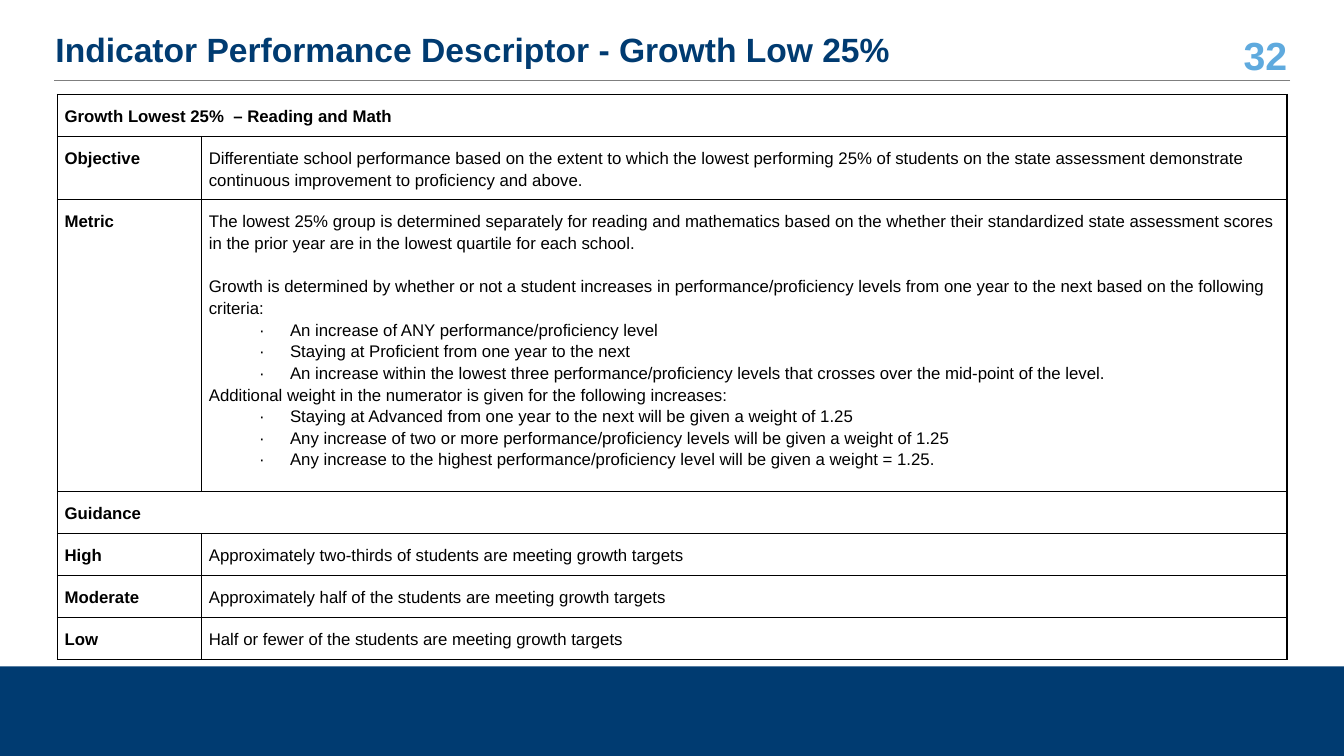
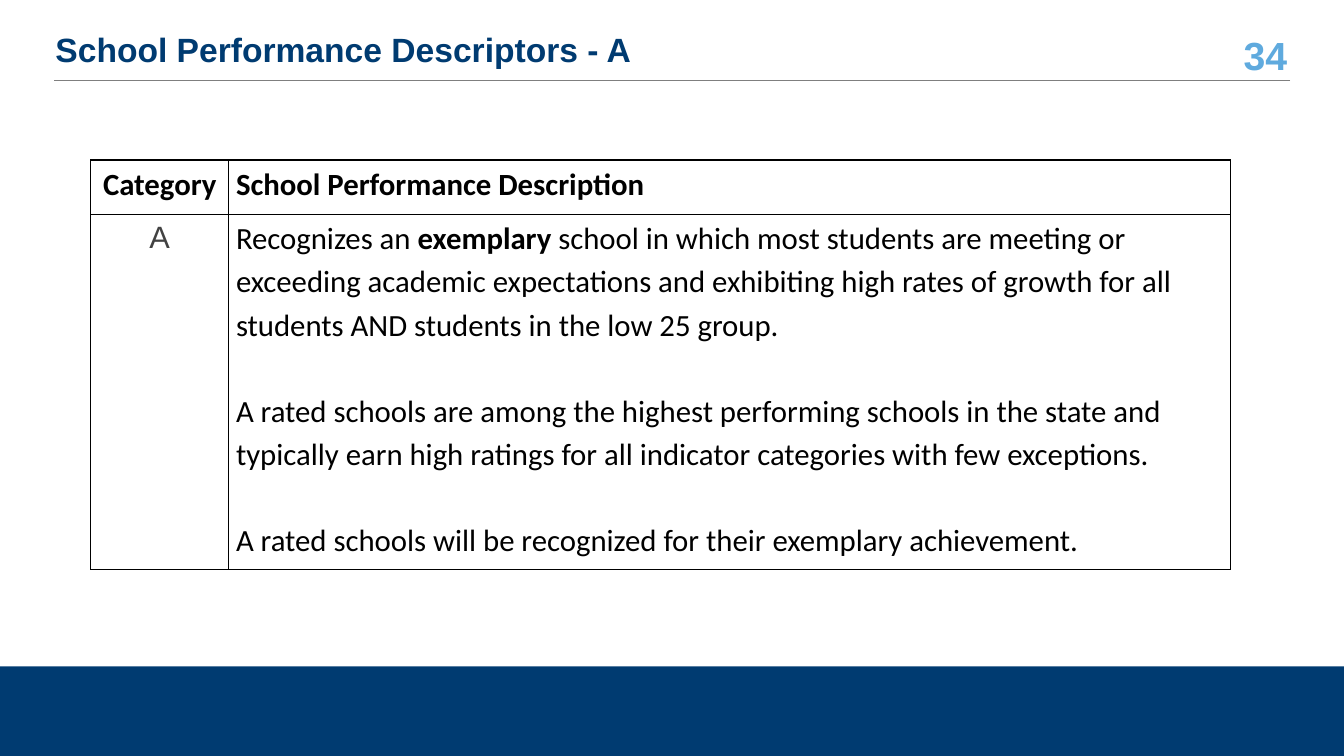
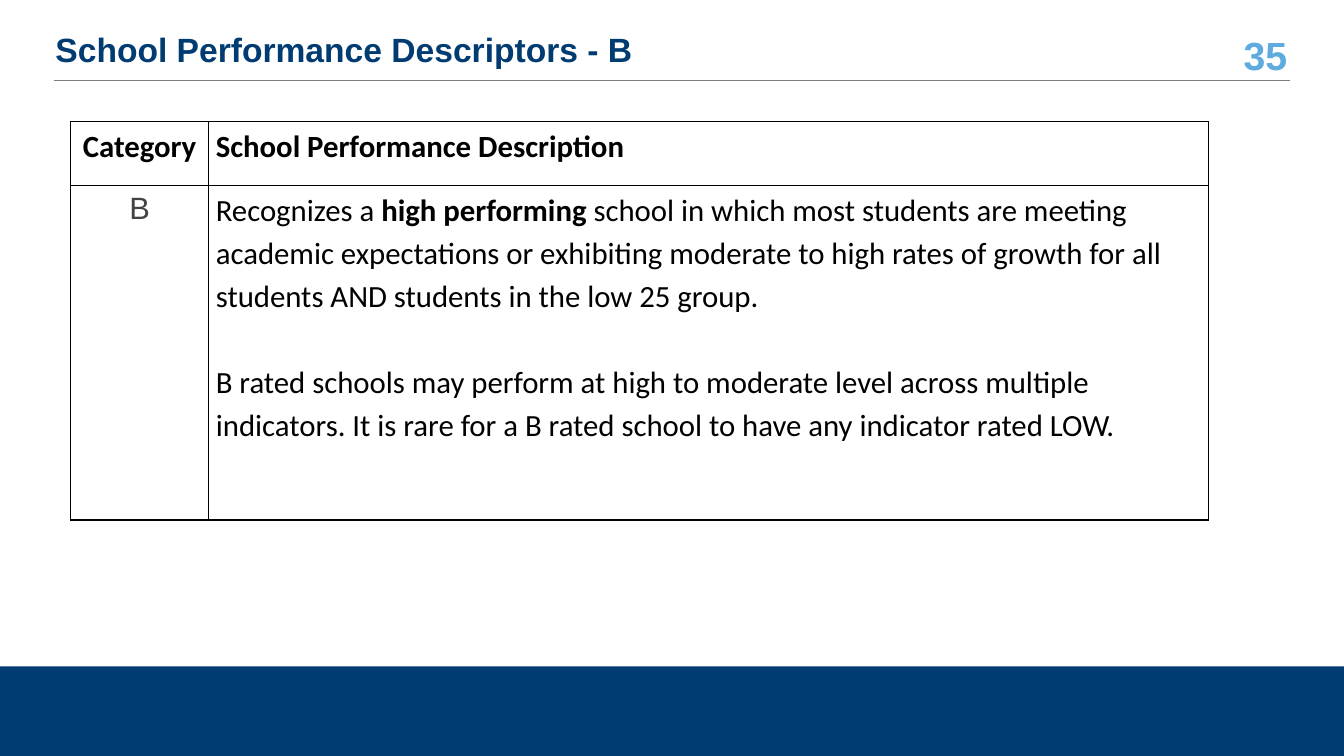
from dataclasses import dataclass

from pptx import Presentation
from pptx import util as u
from pptx.dml import color
from pptx.enum import shapes, text
from pptx.oxml import xmlchemy

Pt = u.Pt
COLORS = {
    "navy": "003B71",
    "sky": "5FAADE",
    "rule": "7F7F7F",
    "ink": "000000",
    "grade": "424242",
}
LEFT, CENTER, RIGHT = text.PP_ALIGN.LEFT, text.PP_ALIGN.CENTER, text.PP_ALIGN.RIGHT


@dataclass
class Style:
    font: str
    size: float
    color: str
    spacing: float = 1.0


@dataclass
class Line:
    words: str
    gap: float = 0
    bullet: bool = False
    align: int = LEFT
    style: Style = None


TITLE = Style("Arial", 24, "navy", 0.9)
NUMBER = Style("Arial", 28, "sky")
DETAIL = Style("Arial", 12, "ink", 1.15)
RATING = Style("Calibri", 22, "ink", 1.15)
GRADE = Style("Arial", 22, "grade", 1.15)


def rgb(name):
    return color.RGBColor.from_string(COLORS[name])


def add_element(parent, tag, **attributes):
    element = xmlchemy.OxmlElement(tag)
    for key, value in attributes.items():
        element.set(key, str(value))
    parent.append(element)
    return element


class Deck:
    def __init__(self):
        self.presentation = Presentation()
        self.presentation.slide_width = Pt(960)
        self.presentation.slide_height = Pt(540)
        self.slide = None

    def start_slide(self, title, number):
        layout = self.presentation.slide_layouts[5]
        self.slide = self.presentation.slides.add_slide(layout)
        self.band()
        self.page_number(number)
        self.rule()
        self.title(title)

    def band(self):
        band = self.slide.shapes.add_shape(
            shapes.MSO_SHAPE.RECTANGLE, 0, Pt(476), Pt(960), Pt(64))
        band.shadow.inherit = False
        band.fill.solid()
        band.fill.fore_color.rgb = rgb("navy")
        band.line.fill.background()

    def page_number(self, number):
        box = self.slide.shapes.add_textbox(Pt(869), Pt(23.8), Pt(57.6), Pt(30.2))
        self.heading(box, f"**{number}**", NUMBER, RIGHT)

    def rule(self):
        rule = self.slide.shapes.add_connector(
            shapes.MSO_CONNECTOR.STRAIGHT, Pt(921.6), Pt(57.4), Pt(38.9), Pt(57.4))
        rule.line.color.rgb = rgb("rule")
        rule.line.width = Pt(0.75)
        add_element(rule._element.spPr, "a:effectLst")

    def title(self, words):
        title = self.slide.shapes.title
        title.left, title.top, title.width, title.height = (
            Pt(32.4), Pt(21.6), Pt(835.2), Pt(30.2))
        self.heading(title, f"**{words}**", TITLE, LEFT)

    def heading(self, shape, words, style, align):
        frame = shape.text_frame
        frame.word_wrap = True
        frame.auto_size = text.MSO_AUTO_SIZE.NONE
        frame.vertical_anchor = text.MSO_ANCHOR.MIDDLE
        self.add_lines(frame, [Line(words, align=align)], style)

    def add_lines(self, frame, lines, default):
        for index, line in enumerate(lines):
            paragraph = frame.add_paragraph() if index else frame.paragraphs[0]
            style = line.style or default
            paragraph.alignment = line.align
            paragraph.line_spacing = style.spacing
            paragraph.space_before = Pt(line.gap)
            if line.bullet:
                properties = paragraph._p.get_or_add_pPr()
                properties.set("marL", str(Pt(58)))
                properties.set("indent", str(Pt(-22)))
                add_element(properties, "a:buFont", typeface=style.font)
                add_element(properties, "a:buChar", char="·")
            for part, words in enumerate(line.words.split("**")):
                if words:
                    run = paragraph.add_run()
                    run.text = words
                    run.font.name = style.font
                    run.font.size = Pt(style.size)
                    run.font.bold = part % 2 == 1
                    run.font.color.rgb = rgb(style.color)

    def borders(self, cell):
        properties = cell._tc.get_or_add_tcPr()
        for side in ("lnL", "lnR", "lnT", "lnB"):
            border = add_element(properties, f"a:{side}", w=Pt(1))
            fill = add_element(border, "a:solidFill")
            add_element(fill, "a:srgbClr", val=COLORS["ink"])

    def table(self, left, top, widths, heights, rows, style, inset_top):
        table = self.slide.shapes.add_table(
            len(rows), len(widths), Pt(left), Pt(top),
            Pt(sum(widths)), Pt(sum(heights))).table
        table.first_row = table.horz_banding = False
        for column, width in zip(table.columns, widths):
            column.width = Pt(width)
        for row, height in zip(table.rows, heights):
            row.height = Pt(height)
        for cell in table.iter_cells():
            cell.margin_left = cell.margin_right = Pt(5.2)
            cell.margin_top, cell.margin_bottom = Pt(inset_top), Pt(7.2)
            self.borders(cell)
            cell.fill.background()
        for r, row in enumerate(rows):
            if len(row) < len(widths):
                table.cell(r, 0).merge(table.cell(r, len(widths) - 1))
            for c, lines in enumerate(row):
                self.add_lines(table.cell(r, c).text_frame, lines, style)

    def rating(self, grade, number, left, top, widths, heights, description):
        self.start_slide(f"School Performance Descriptors - {grade}", number)
        rows = [
            [[Line("**Category**", align=CENTER)],
             [Line("**School Performance Description**")]],
            [[Line(grade, align=CENTER, style=GRADE)],
             [Line(words, gap=30.7 if index else 0)
              for index, words in enumerate(description)]],
        ]
        self.table(left, top, widths, heights, rows, RATING, 0.7)


def label_row(label, words):
    return [[Line(f"**{label}**")], [Line(words)]]


def main():
    deck = Deck()

    deck.start_slide("Indicator Performance Descriptor - Growth Low 25%", 32)
    metric = [
        Line("The lowest 25% group is determined separately for reading and mathematics based on the whether their standardized state assessment scores in the prior year are in the lowest quartile for each school."),
        Line("Growth is determined by whether or not a student increases in performance/proficiency levels from one year to the next based on the following criteria:", gap=15.5),
        Line("An increase of ANY performance/proficiency level", bullet=True),
        Line("Staying at Proficient from one year to the next", bullet=True),
        Line("An increase within the lowest three performance/proficiency levels that crosses over the mid-point of the level.", bullet=True),
        Line("Additional weight in the numerator is given for the following increases:"),
        Line("Staying at Advanced from one year to the next will be given a weight of 1.25", bullet=True),
        Line("Any increase of two or more performance/proficiency levels will be given a weight of 1.25", bullet=True),
        Line("Any increase to the highest performance/proficiency level will be given a weight = 1.25.", bullet=True),
    ]
    indicator_rows = [
        [[Line("**Growth Lowest 25%  – Reading and Math**")]],
        label_row("Objective", "Differentiate school performance based on the extent to which the lowest performing 25% of students on the state assessment demonstrate continuous improvement to proficiency and above."),
        [[Line("**Metric**")], metric],
        [[Line("**Guidance**")]],
        label_row("High", "Approximately two-thirds of students are meeting growth targets"),
        label_row("Moderate", "Approximately half of the students are meeting growth targets"),
        label_row("Low", "Half or fewer of the students are meeting growth targets"),
    ]
    deck.table(41, 67.4, [103, 775.4], [30, 45, 208.6] + [30] * 4,
               indicator_rows, DETAIL, 7.2)

    deck.rating("A", 34, 64.8, 114.3, [98.6, 715.4], [38.6, 254], [
        "Recognizes an **exemplary** school in which most students are meeting or exceeding academic expectations and exhibiting high rates of growth for all students AND students in the low 25 group.",
        "A rated schools are among the highest performing schools in the state and typically earn high ratings for all indicator categories with few exceptions.",
        "A rated schools will be recognized for their exemplary achievement.",
    ])

    deck.rating("B", 35, 50.4, 87, [98.6, 714.4], [45.4, 239], [
        "Recognizes a **high performing** school in which most students are meeting academic expectations or exhibiting moderate to high rates of growth for all students AND students in the low 25 group.",
        "B rated schools may perform at high to moderate level across multiple indicators. It is rare for a B rated school to have any indicator rated LOW.",
    ])

    deck.presentation.save("out.pptx")


if __name__ == "__main__":
    main()
